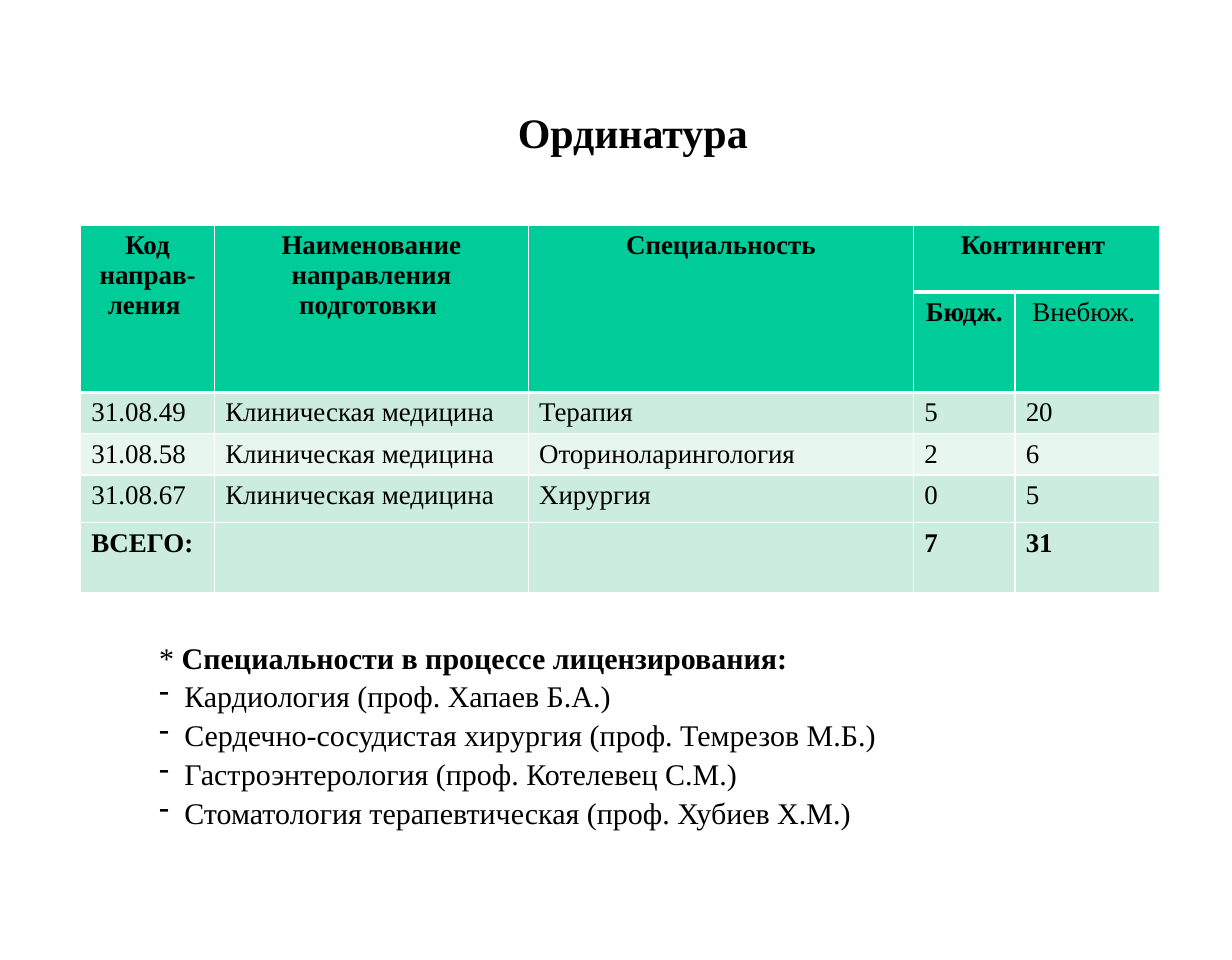
import pptx
import pptx.util
import pptx.dml.color
import pptx.enum.text
import pptx.oxml.ns
import lxml.etree

Cm = pptx.util.Cm
Pt = pptx.util.Pt
qn = pptx.oxml.ns.qn
ALIGN = pptx.enum.text.PP_ALIGN
COLORS = {"text": "000000", "border": "FFFFFF", "header": "00CC99",
          "band": "CBECDE", "light": "E7F6EF"}


def add_span(para, words, size, bold=False):
    span = para.add_run()
    span.text = words
    span.font.name = "Times New Roman"
    span.font.size = Pt(size)
    span.font.bold = bold
    span.font.color.rgb = pptx.dml.color.RGBColor.from_string(COLORS["text"])


def add_borders(cell, widths):
    properties = cell._tc.get_or_add_tcPr()
    for side, width in widths.items():
        line = lxml.etree.SubElement(properties, qn("a:ln" + side), w=str(Pt(width)))
        fill = lxml.etree.SubElement(line, qn("a:solidFill"))
        lxml.etree.SubElement(fill, qn("a:srgbClr"), val=COLORS["border"])


deck = pptx.Presentation()
deck.slide_width = Cm(29.01)
deck.slide_height = Cm(22.61)
page = deck.slides.add_slide(deck.slide_layouts[6])

column_widths = [3.15, 7.39, 9.07, 2.39, 3.4]
row_heights = [1.57, 2.34, 0.97, 0.97, 1.13, 1.65]
row_fills = ["header", "header", "band", "light", "band", "band"]
rows = [
    ["Код направ-ления ", "Наименование направления подготовки ",
     "Специальность", "Контингент ", ""],
    ["", "", "", "Бюдж.", "Внебюж. "],
    ["31.08.49", "Клиническая медицина", "Терапия", "5", "20"],
    ["31.08.58", "Клиническая медицина", "Оториноларингология", "2", "6"],
    ["31.08.67", "Клиническая медицина", "Хирургия", "0", "5"],
    ["ВСЕГО:", "", "", "7", "31"],
]
table = page.shapes.add_table(
    len(rows), len(column_widths), Cm(1.9), Cm(5.31),
    Cm(sum(column_widths)), Cm(sum(row_heights))).table
for column, width in zip(table.columns, column_widths):
    column.width = Cm(width)
for row, height in zip(table.rows, row_heights):
    row.height = Cm(height)

for row_index, values in enumerate(rows):
    for column_index, words in enumerate(values):
        cell = table.cell(row_index, column_index)
        add_borders(cell, {"L": 1, "R": 1,
                           "T": 3 if row_index in (1, 2) else 1,
                           "B": 3 if row_index < 2 else 1})
        cell.fill.solid()
        cell.fill.fore_color.rgb = pptx.dml.color.RGBColor.from_string(
            COLORS[row_fills[row_index]])
        para = cell.text_frame.paragraphs[0]
        para.alignment = ALIGN.CENTER if row_index < 2 else ALIGN.LEFT
        if words:
            bold = row_index in (0, 1, 5) and words != "Внебюж. "
            add_span(para, words, 18, bold)
        else:
            para.font.size = Pt(18)

for column_index in range(3):
    table.cell(0, column_index).merge(table.cell(1, column_index))
table.cell(0, 3).merge(table.cell(0, 4))

title = page.shapes.add_textbox(Cm(2.9), Cm(2.11), Cm(24), Cm(2)).text_frame
title.word_wrap = True
title.vertical_anchor = pptx.enum.text.MSO_ANCHOR.MIDDLE
title.margin_left = title.margin_right = title.margin_top = title.margin_bottom = 0
para = title.paragraphs[0]
para.alignment = ALIGN.CENTER
add_span(para, "Ординатура", 28, True)

notes = page.shapes.add_textbox(Cm(3.5), Cm(14.86), Cm(17.9), Cm(4.52)).text_frame
notes.word_wrap = True
para = notes.paragraphs[0]
para.line_spacing = 1.08
add_span(para, "* ", 20)
add_span(para, "Специальности в процессе лицензирования:", 20, True)
for specialty in ["Кардиология (проф. Хапаев Б.А.)",
                  "Сердечно-сосудистая хирургия (проф. Темрезов М.Б.)",
                  "Гастроэнтерология (проф. Котелевец С.М.)",
                  "Стоматология терапевтическая (проф. Хубиев Х.М.)"]:
    para = notes.add_paragraph()
    properties = para._p.get_or_add_pPr()
    properties.set("marL", str(Cm(0.59)))
    properties.set("indent", str(Cm(-0.59)))
    lxml.etree.SubElement(properties, qn("a:buChar"), char="-")
    para.line_spacing = 1.08
    add_span(para, specialty, 20)

deck.save("out.pptx")
